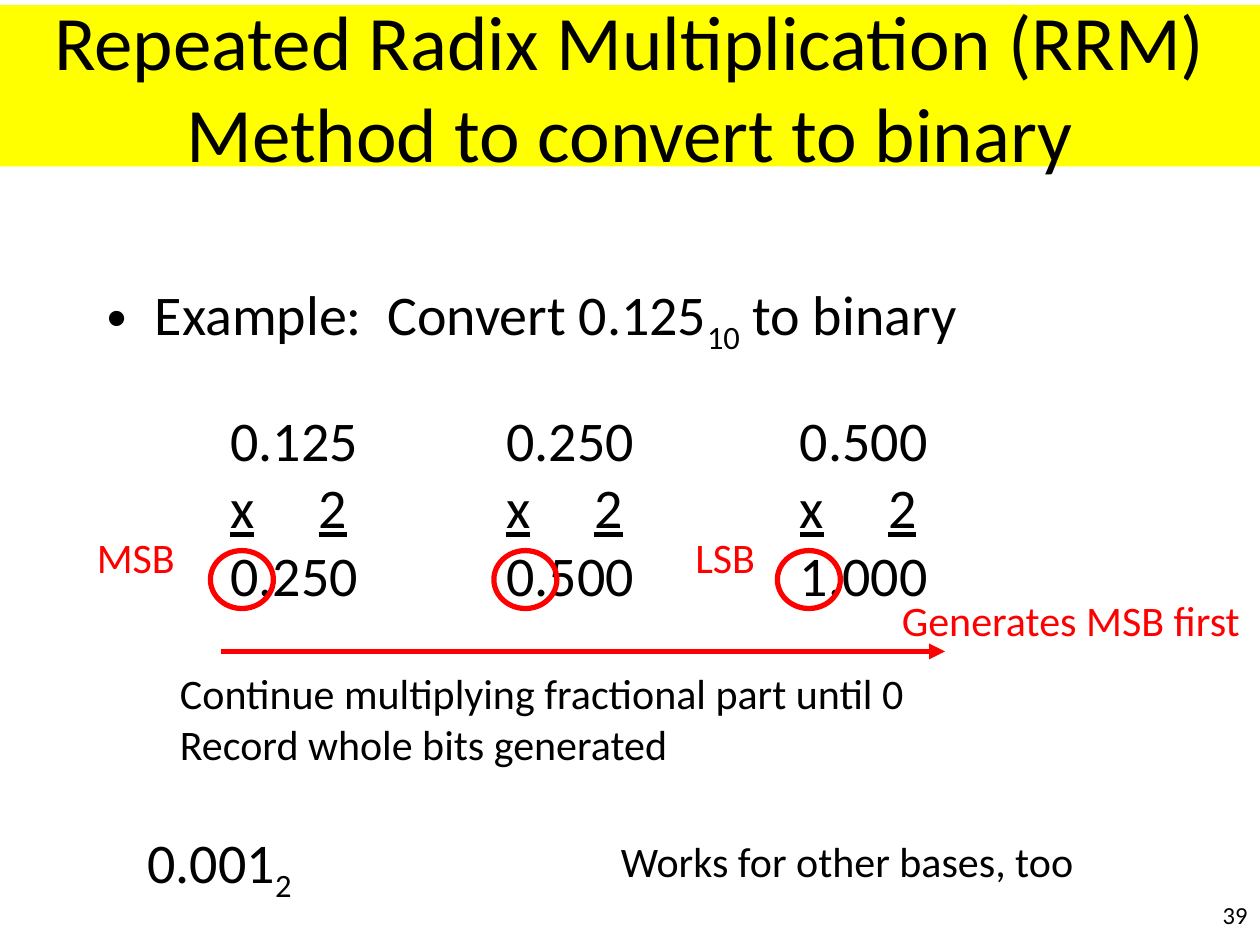
from lxml import etree
from pptx import Presentation
from pptx.dml.color import RGBColor
from pptx.enum.shapes import MSO_CONNECTOR as Connector, MSO_SHAPE as Shape
from pptx.enum.text import MSO_ANCHOR as Anchor, PP_ALIGN as Align
from pptx.oxml.ns import qn
from pptx.util import Inches, Pt

BLACK = RGBColor(0x00, 0x00, 0x00)
RED = RGBColor(0xFF, 0x00, 0x00)
YELLOW = RGBColor(0xFF, 0xFF, 0x00)
FONT = "Calibri"
LARGE, MEDIUM = 32, 24


def style(para, size, color=BLACK):
    para.font.name = FONT
    para.font.size = Pt(size)
    para.font.color.rgb = color


def add_text(page, place, lines, size, color=BLACK, wrap=False):
    box = page.shapes.add_textbox(*map(Inches, place))
    frame = box.text_frame
    frame.word_wrap = wrap
    frame.text = "\n".join(lines)
    for para in frame.paragraphs:
        style(para, size, color)
    return frame.paragraphs


def add_subscript(para, text):
    span = para.add_run()
    span.text = text
    span.font._element.set("baseline", "-25000")


def add_title(page, text):
    band = page.shapes.add_shape(
        Shape.RECTANGLE, 0, Inches(0.04), Inches(10), Inches(1.28))
    band.shadow.inherit = False
    band.fill.solid()
    band.fill.fore_color.rgb = YELLOW
    band.line.fill.background()
    frame = band.text_frame
    frame.word_wrap = True
    frame.vertical_anchor = Anchor.MIDDLE
    frame.text = text
    para = frame.paragraphs[0]
    para.alignment = Align.CENTER
    style(para, 44)


def add_bullet(para):
    props = para._p.get_or_add_pPr()
    props.set("marL", str(Inches(0.38)))
    props.set("indent", str(-Inches(0.38)))
    font = etree.SubElement(props, qn("a:buFont"))
    font.set("typeface", "Arial")
    etree.SubElement(props, qn("a:buChar")).set("char", "•")
    # Bullet settings come before the default run properties
    props.append(props.find(qn("a:defRPr")))


def add_multiplication(page, left, factor, product):
    paras = add_text(page, (left, 3.17, 1.23, 1.72),
                     [factor, "x\t2", product], LARGE)
    paras[1].font.underline = True
    # The tab stop lines up the multiplier
    props = paras[1]._p.get_or_add_pPr()
    stops = etree.Element(qn("a:tabLst"))
    stop = etree.SubElement(stops, qn("a:tab"))
    stop.set("pos", str(Inches(0.7)))
    stop.set("algn", "l")
    props.insert(0, stops)


def add_ring(page, left):
    ring = page.shapes.add_shape(
        Shape.OVAL, Inches(left), Inches(4.37), Inches(0.5), Inches(0.46))
    ring.shadow.inherit = False
    ring.fill.background()
    ring.line.color.rgb = RED
    ring.line.width = Pt(3)


def add_arrow(page, start, end, y):
    arrow = page.shapes.add_connector(
        Connector.STRAIGHT, Inches(start), Inches(y), Inches(end), Inches(y))
    arrow.line.color.rgb = RED
    arrow.line.width = Pt(3)
    head = etree.SubElement(arrow.line._get_or_add_ln(), qn("a:tailEnd"))
    head.set("type", "triangle")
    etree.SubElement(arrow._element.spPr, qn("a:effectLst"))


def main():
    deck = Presentation()
    deck.slide_width, deck.slide_height = Inches(10), Inches(7.5)
    page = deck.slides.add_slide(deck.slide_layouts[6])

    # Title and example
    add_title(page, "Repeated Radix Multiplication (RRM) Method to convert to binary")
    example = add_text(page, (0.75, 2.17, 8.5, 4.5),
                       ["Example:  Convert 0.125"], LARGE, wrap=True)[0]
    add_subscript(example, "10")
    example.add_run().text = " to binary"
    add_bullet(example)

    # Multiplication steps, each with its whole bit ringed
    steps = [(1.73, "0.125", "0.250"),
             (3.92, "0.250", "0.500"),
             (6.25, "0.500", "1.000")]
    for index, (left, factor, product) in enumerate(steps):
        add_multiplication(page, left, factor, product)
        add_ring(page, 1.67 + 2.25 * index)

    # Order of the bits
    add_arrow(page, 1.75, 7.5, 5.17)
    for place, label in [((0.67, 4.17, 0.83, 0.5), "MSB"),
                         ((5.42, 4.17, 0.68, 0.5), "LSB"),
                         ((7.06, 4.67, 2.94, 0.5), "Generates MSB first")]:
        add_text(page, place, [label], MEDIUM, RED)

    # Rule, result and remark
    add_text(page, (1.33, 5.25, 6.01, 0.91),
             ["Continue multiplying fractional part until 0",
              "Record whole bits generated"], MEDIUM)
    result = add_text(page, (1.07, 6.52, 1.38, 0.64), ["0.001"], LARGE)[0]
    add_subscript(result, "2")
    add_text(page, (4.83, 6.58, 3.82, 0.5), ["Works for other bases, too"], MEDIUM)

    # Page number
    number = add_text(page, (7.92, 7.09, 2.08, 0.5), ["39"], 14, wrap=True)[0]
    number.alignment = Align.RIGHT

    deck.save("out.pptx")


if __name__ == "__main__":
    main()
